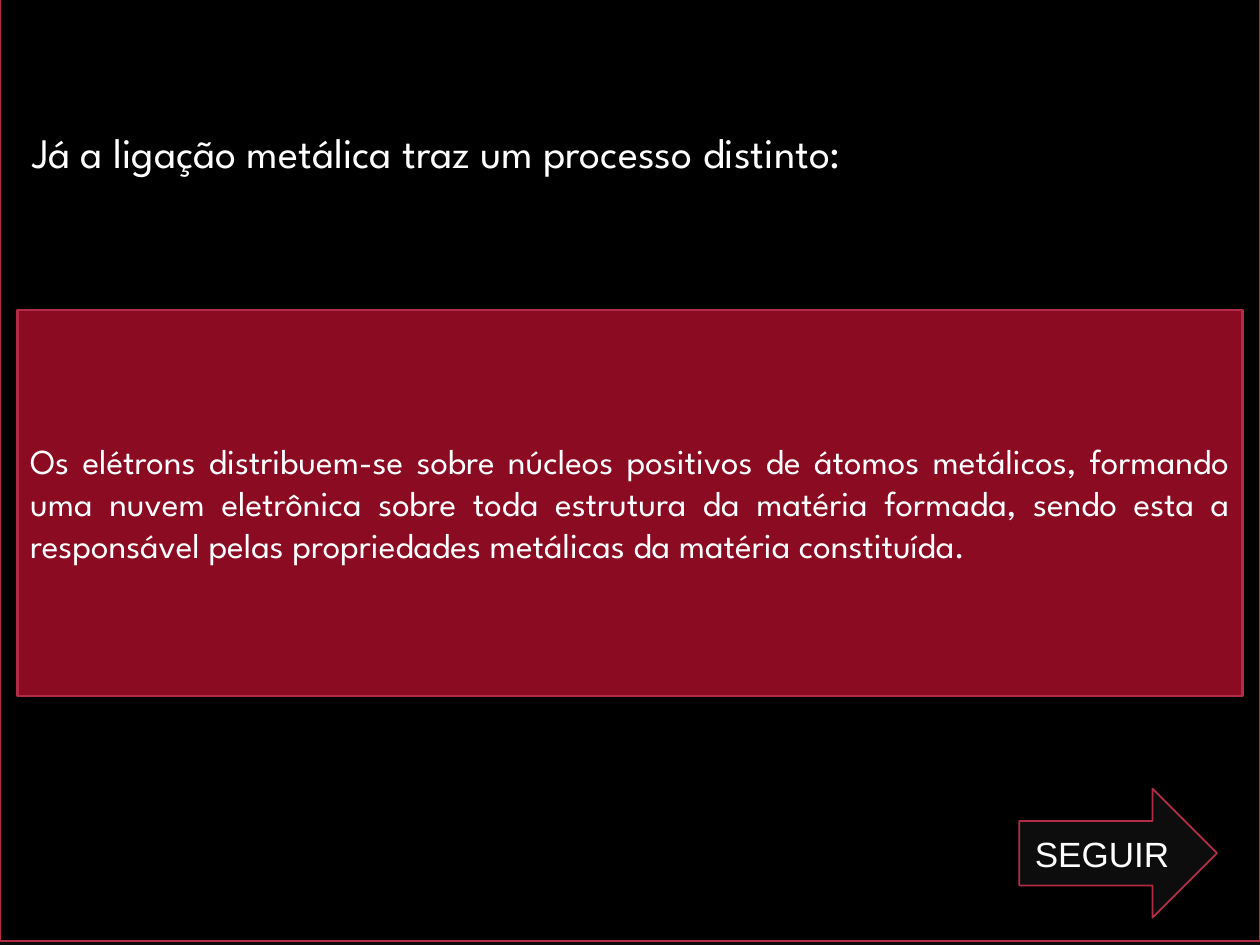
from dataclasses import dataclass

from pptx import Presentation
from pptx.dml.color import RGBColor
from pptx.enum.shapes import MSO_SHAPE
from pptx.enum.text import MSO_ANCHOR, MSO_AUTO_SIZE, PP_ALIGN
from pptx.shapes.autoshape import Shape
from pptx.slide import Slide
from pptx.util import Pt

BLACK = RGBColor(0x00, 0x00, 0x00)
CHARCOAL = RGBColor(0x0D, 0x0D, 0x0D)
CRIMSON = RGBColor(0x8B, 0x0B, 0x23)
ROSE = RGBColor(0xB2, 0x2C, 0x46)
WHITE = RGBColor(0xFF, 0xFF, 0xFF)

TITLE_ONLY_LAYOUT = 5


@dataclass(frozen=True)
class Panel:
    left: float
    top: float
    width: float
    height: float
    fill: RGBColor
    line: RGBColor
    line_width: float = 1.35
    preset: MSO_SHAPE = MSO_SHAPE.RECTANGLE
    text: str = ""
    font: str = "League Spartan"
    size: float = 20
    align: PP_ALIGN = PP_ALIGN.JUSTIFY


BACKDROP = Panel(0, -3.6, 720, 541.4, BLACK, ROSE)
NEXT_ARROW = Panel(
    582.5, 450.7, 113, 73.7, CHARCOAL, ROSE, line_width=1,
    preset=MSO_SHAPE.RIGHT_ARROW, text="SEGUIR", font="Arial",
    align=PP_ALIGN.CENTER,
)
EXPLANATION = Panel(
    10.1, 177.1, 700, 220.5, CRIMSON, ROSE,
    text="Os elétrons distribuem-se sobre núcleos positivos de átomos "
         "metálicos, formando uma nuvem eletrônica sobre toda estrutura da "
         "matéria formada, sendo esta a responsável pelas propriedades "
         "metálicas da matéria constituída.",
)
HEADING = Panel(
    11.2, 7.2, 700, 158.4, BLACK, BLACK, size=24,
    text="Já a ligação metálica traz um processo distinto:",
)


def format_panel(shape: Shape, panel: Panel) -> None:
    """Apply a panel's place, colours and text to a shape or placeholder."""
    shape.left, shape.top = Pt(panel.left), Pt(panel.top)
    shape.width, shape.height = Pt(panel.width), Pt(panel.height)
    shape.fill.solid()
    shape.fill.fore_color.rgb = panel.fill
    shape.line.color.rgb = panel.line
    shape.line.width = Pt(panel.line_width)
    shape.shadow.inherit = False
    if not panel.text:
        return
    frame = shape.text_frame
    frame.text = panel.text
    frame.word_wrap = True
    frame.auto_size = MSO_AUTO_SIZE.NONE
    frame.vertical_anchor = MSO_ANCHOR.MIDDLE
    paragraph = frame.paragraphs[0]
    paragraph.alignment = panel.align
    for run in paragraph.runs:
        run.font.name = panel.font
        run.font.size = Pt(panel.size)
        run.font.color.rgb = WHITE


def add_panel(slide: Slide, panel: Panel) -> None:
    shape = slide.shapes.add_shape(
        panel.preset, Pt(panel.left), Pt(panel.top),
        Pt(panel.width), Pt(panel.height),
    )
    format_panel(shape, panel)


def place_heading(slide: Slide, panel: Panel) -> None:
    """Format the title placeholder and bring it in front of the panels."""
    heading = slide.shapes.title
    format_panel(heading, panel)
    heading.element.getparent().append(heading.element)


def main() -> None:
    presentation = Presentation()
    presentation.slide_width, presentation.slide_height = Pt(720), Pt(540)
    layout = presentation.slide_layouts[TITLE_ONLY_LAYOUT]
    slide = presentation.slides.add_slide(layout)
    slide.background.fill.solid()
    slide.background.fill.fore_color.rgb = CHARCOAL

    for panel in (BACKDROP, NEXT_ARROW, EXPLANATION):
        add_panel(slide, panel)
    place_heading(slide, HEADING)

    presentation.save("out.pptx")


if __name__ == "__main__":
    main()
